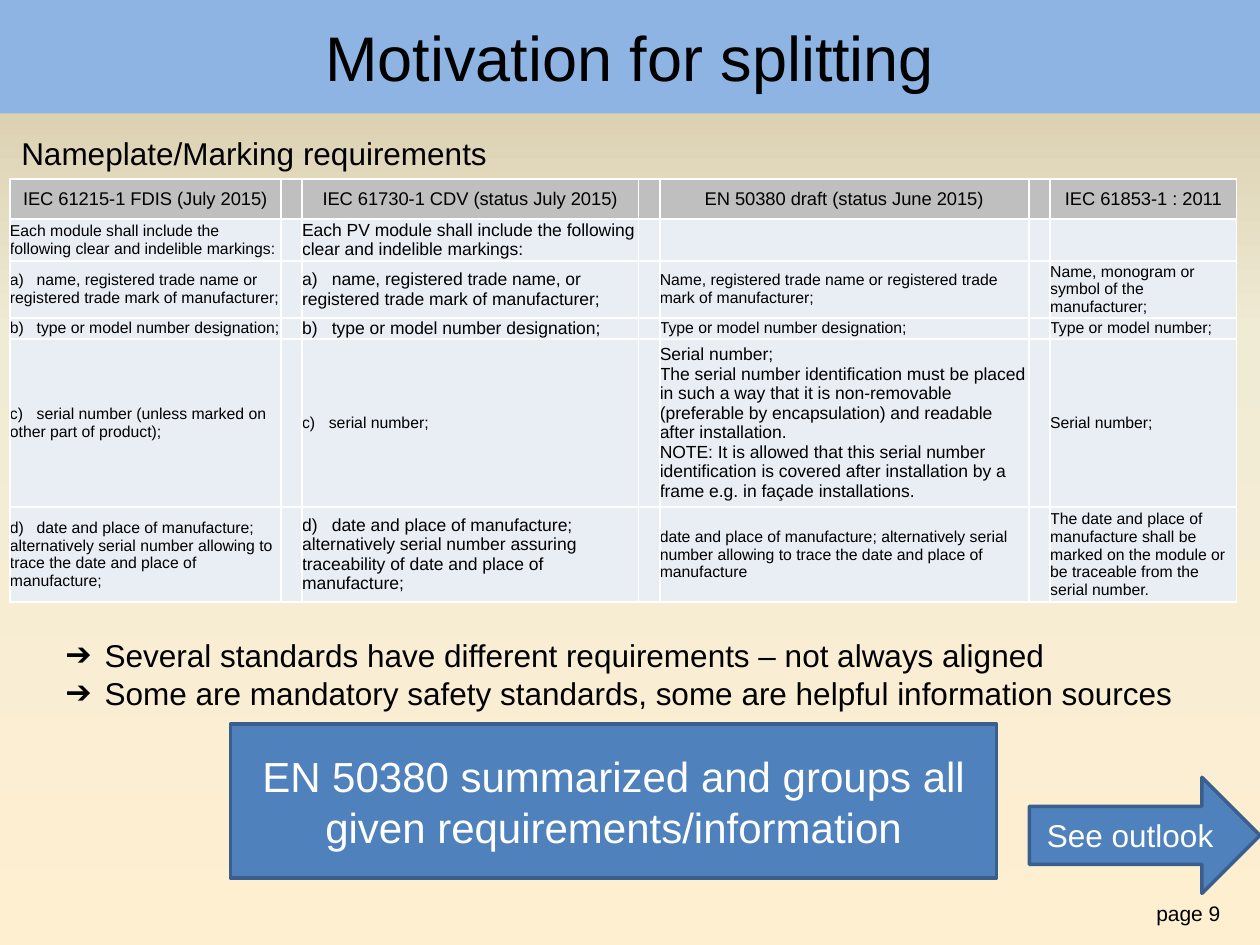
import copy
from dataclasses import dataclass

import lxml.etree
import pptx
import pptx.dml.color
import pptx.enum.shapes
import pptx.enum.text
import pptx.oxml.ns
import pptx.util

Cm, Pt = pptx.util.Cm, pptx.util.Pt
RGB = pptx.dml.color.RGBColor.from_string
ALIGN = pptx.enum.text.PP_ALIGN
MID = pptx.enum.text.MSO_ANCHOR.MIDDLE
SHAPE = pptx.enum.shapes.MSO_SHAPE
qn = pptx.oxml.ns.qn


@dataclass(frozen=True)
class Theme:
    face: str = "Arial"
    ink: str = "000000"
    white: str = "FFFFFF"
    bar: str = "8EB4E3"
    head: str = "BFBFBF"
    cell: str = "E9EDF4"
    blue: str = "4F81BD"
    edge: str = "3A5F8C"
    sky: tuple = ((0, "FFEFD1"), (0.65, "F0EBD5"), (1, "D1C39F"))
    title: float = 36
    call: float = 24
    body: float = 18
    foot: float = 12
    top: float = 10.5
    big: float = 10
    small: float = 9


T = Theme()

HEADS = ["IEC 61215-1 FDIS (July 2015)", "IEC 61730-1 CDV (status July 2015)",
         "EN 50380 draft (status June 2015)", "IEC 61853-1 : 2011"]
ROWS = [
    ["Each module shall include the following clear and indelible markings:",
     "Each PV module shall include the following clear and indelible markings:", "", ""],
    ["a)\tname, registered trade name or registered trade mark of manufacturer;",
     "a)\tname, registered trade name, or registered trade mark of manufacturer;",
     "Name, registered trade name or registered trade mark of manufacturer;",
     "Name, monogram or symbol of the manufacturer;"],
    ["b)\ttype or model number designation;", "b)\ttype or model number designation;",
     "Type or model number designation;", "Type or model number;"],
    ["c)\tserial number (unless marked on other part of product);", "c)\tserial number;",
     "Serial number;\n"
     "The serial number identification must be placed in such a way that it is "
     "non-removable (preferable by encapsulation) and readable after installation.\n"
     "NOTE: It is allowed that this serial number identification is covered after "
     "installation by a frame e.g. in façade installations.",
     "Serial number;"],
    ["d)\tdate and place of manufacture; alternatively serial number allowing to trace "
     "the date and place of manufacture;",
     "d)\tdate and place of manufacture; alternatively serial number assuring "
     "traceability of date and place of manufacture;",
     "date and place of manufacture; alternatively serial number allowing to trace "
     "the date and place of manufacture",
     "The date and place of manufacture shall be marked on the module or be traceable "
     "from the serial number."],
]
# Body cells (row, standard) in the larger size
LARGE = {(1, 1), (2, 1), (3, 1), (5, 1), (4, 2)}
WIDTHS = [5.46, 6.78, 7.44, 3.76]
GAP = 0.43
HEIGHTS = [0.8, 0.8, 1.07, 0.38, 3.15, 1.78]


def style(obj, form):
    for key, value in form.items():
        setattr(obj, key, value)


def write(frame, text, size, ink=T.ink, align=ALIGN.LEFT, mark=None, tab=None):
    """Fill a text frame, one paragraph a line."""
    for i, line in enumerate(text.split("\n")):
        para = frame.add_paragraph() if i else frame.paragraphs[0]
        para.alignment = align
        props = para._p.get_or_add_pPr()
        if mark:
            props.set("marL", str(Cm(0.79)))
            props.set("indent", str(-Cm(0.79)))
            lxml.etree.SubElement(props, qn("a:buFont"), typeface=T.face)
            lxml.etree.SubElement(props, qn("a:buChar"), char=mark)
        if tab:
            tabs = lxml.etree.SubElement(props, qn("a:tabLst"))
            lxml.etree.SubElement(tabs, qn("a:tab"), pos=str(Cm(tab)), algn="l")
        run = para.add_run()
        run.text = line
        style(run.font, {"name": T.face, "size": Pt(size)})
        run.font.color.rgb = RGB(ink)


def label(slide, box, text, size, **form):
    item = slide.shapes.add_textbox(*map(Cm, box))
    item.text_frame.word_wrap = False
    write(item.text_frame, text, size, **form)


def block(slide, box, kind, text, size, fill, ink, edge=None):
    item = slide.shapes.add_shape(kind, *map(Cm, box))
    item.shadow.inherit = False
    item.fill.solid()
    item.fill.fore_color.rgb = RGB(fill)
    if edge:
        item.line.color.rgb = RGB(edge)
        item.line.width = Pt(2)
    else:
        item.line.fill.background()
    style(item.text_frame, {"word_wrap": True, "vertical_anchor": MID})
    write(item.text_frame, text, size, ink=ink, align=ALIGN.CENTER)


def sky(slide):
    fill = slide.background.fill
    fill.gradient()
    fill.gradient_angle = 90
    stops = next(slide.element.iter(qn("a:gsLst")))
    stops.append(copy.deepcopy(stops[0]))
    for stop, (place, tint) in zip(fill.gradient_stops, T.sky):
        stop.position = place
        stop.color.rgb = RGB(tint)


def paint(cell, fill):
    """Set margins, white borders and fill of one cell."""
    style(cell, {"margin_left": 0, "margin_right": 0, "margin_top": 0,
                 "margin_bottom": 0, "vertical_anchor": MID})
    props = cell._tc.get_or_add_tcPr()
    for side in ("lnL", "lnR", "lnT", "lnB"):
        line = lxml.etree.SubElement(props, qn("a:" + side), w=str(Pt(1)))
        solid = lxml.etree.SubElement(line, qn("a:solidFill"))
        lxml.etree.SubElement(solid, qn("a:srgbClr"), val=T.white)
    cell.fill.solid()
    cell.fill.fore_color.rgb = RGB(fill)


def grid(slide, left, top):
    # Narrow spacer columns stand between the standards
    cols = [WIDTHS[i // 2] if i % 2 == 0 else GAP for i in range(2 * len(WIDTHS) - 1)]
    frame = slide.shapes.add_table(len(HEIGHTS), len(cols), Cm(left), Cm(top),
                                   Cm(sum(cols)), Cm(sum(HEIGHTS)))
    table = frame.table
    for col, width in zip(table.columns, cols):
        col.width = Cm(width)
    for r, (row, high) in enumerate(zip([HEADS] + ROWS, HEIGHTS)):
        table.rows[r].height = Cm(high)
        for c in range(len(cols)):
            cell = table.cell(r, c)
            paint(cell, T.cell if r else T.head)
            text = "" if c % 2 else row[c // 2]
            if not text:
                # Keeps an empty cell from stretching its row
                para = cell.text_frame.paragraphs[0]._p
                lxml.etree.SubElement(para, qn("a:endParaRPr"), sz=str(T.small * 100))
                continue
            size = T.big if (r, c // 2) in LARGE else T.small
            write(cell.text_frame, text, size if r else T.top,
                  align=ALIGN.LEFT if r else ALIGN.CENTER,
                  tab=0.06 * size if "\t" in text else None)


def close(slide, left, top):
    """Place the findings and the two call-outs below them."""
    label(slide, (left, top, 23.04, 1.8),
          "Several standards have different requirements – not always aligned\n"
          "Some are mandatory safety standards, some are helpful information sources",
          T.body, mark="➔")
    look = {"fill": T.blue, "ink": T.white, "edge": T.edge}
    block(slide, (left + 3.58, top + 1.9, 15.44, 3.1), SHAPE.RECTANGLE,
          "EN 50380 summarized and groups all given requirements/information",
          T.call, **look)
    block(slide, (left + 19.68, top + 2.97, 4.65, 2.34), SHAPE.RIGHT_ARROW,
          "See outlook", T.body, **look)


def main():
    deck = pptx.Presentation()
    style(deck, {"slide_width": Cm(25.4), "slide_height": Cm(19.05)})
    slide = deck.slides.add_slide(deck.slide_layouts[6])
    sky(slide)
    label(slide, (23.06, 18.03, 2.11, 0.76), "page 9", T.foot)
    block(slide, (0, 0, 25.4, 2.29), SHAPE.RECTANGLE, "Motivation for splitting",
          T.title, T.bar, T.ink)
    grid(slide, 0.2, 3.61)
    label(slide, (0.18, 2.57, 9.98, 1.02), "Nameplate/Marking requirements", T.body)
    close(slide, 1.07, 12.7)
    deck.save("out.pptx")


if __name__ == "__main__":
    main()
